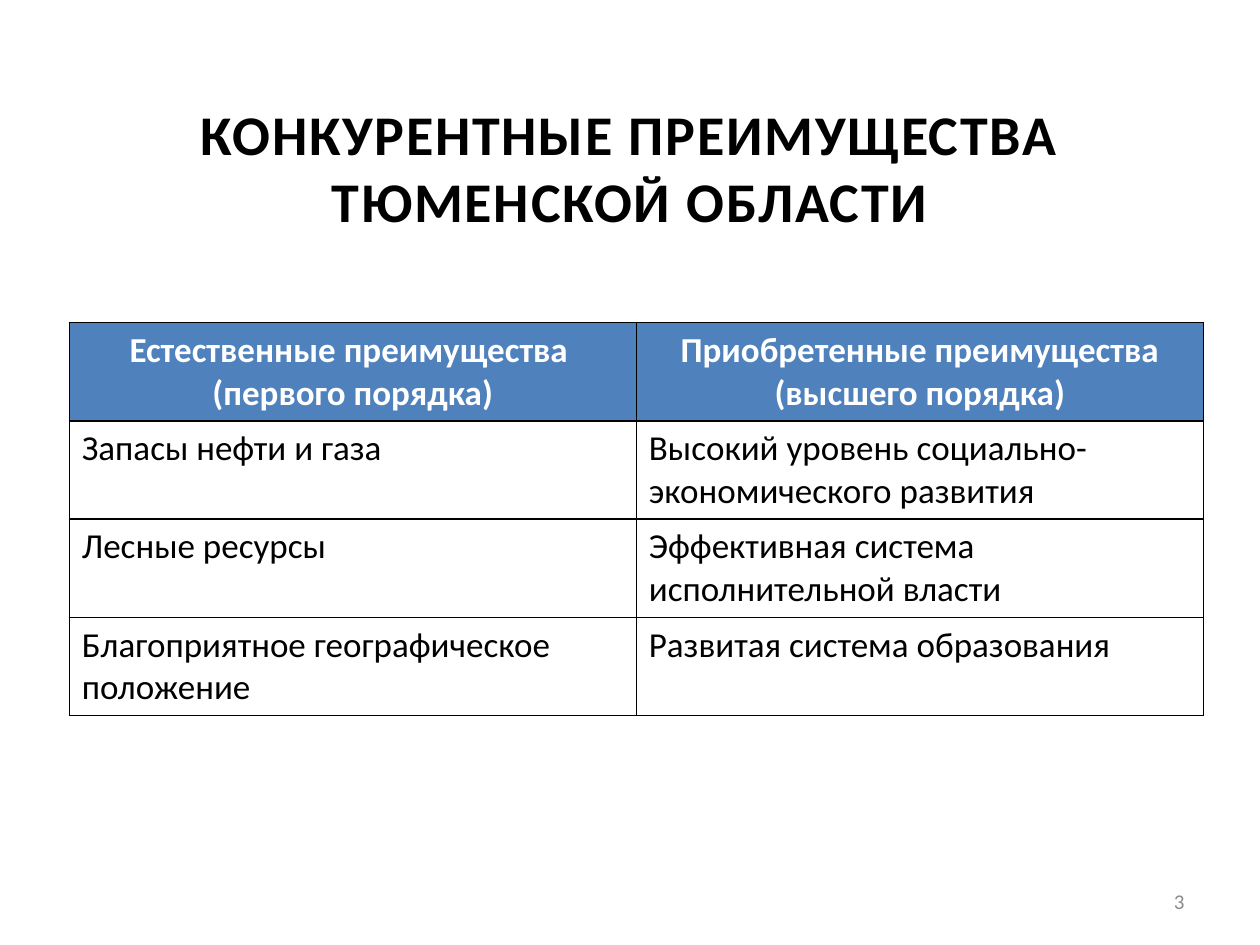
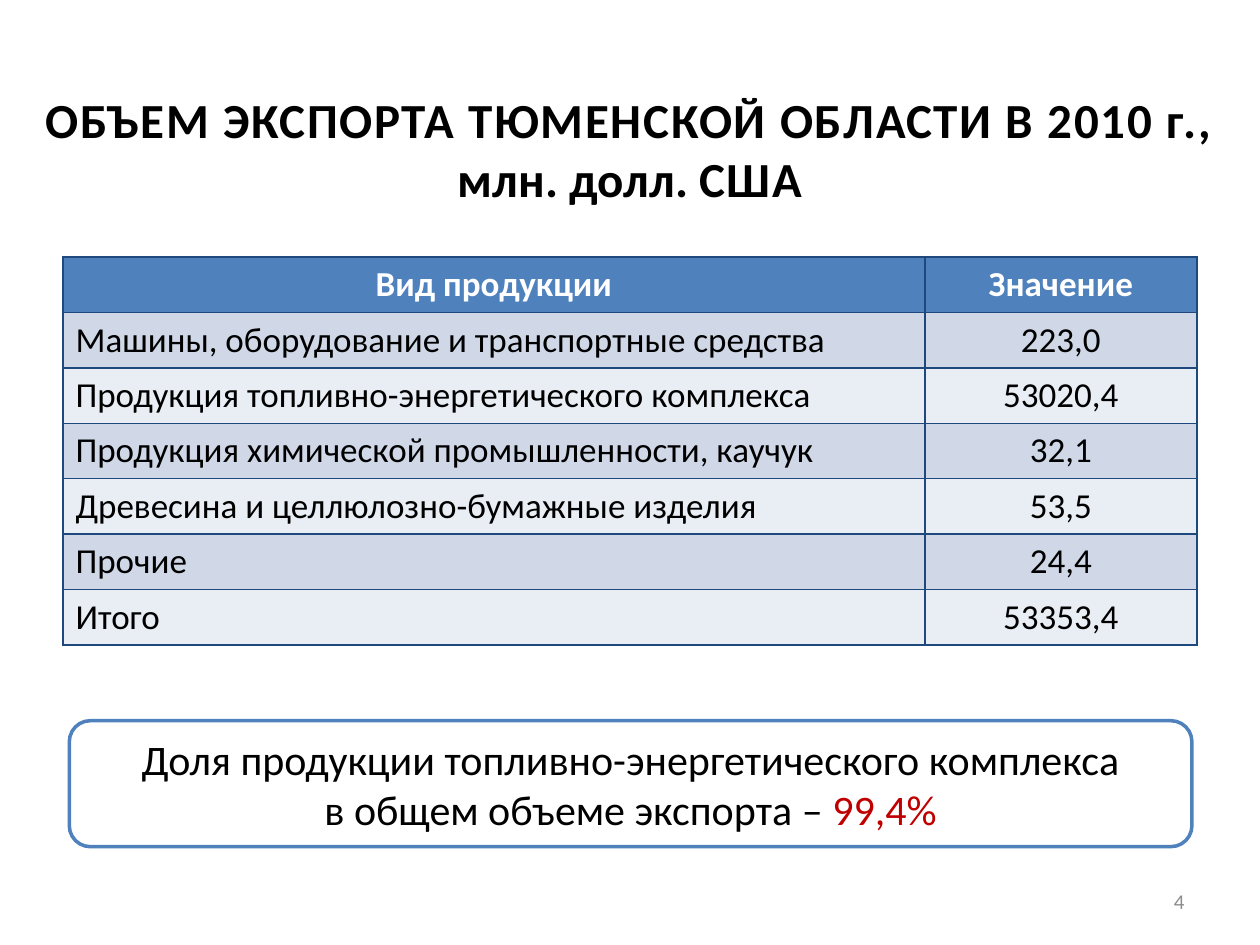
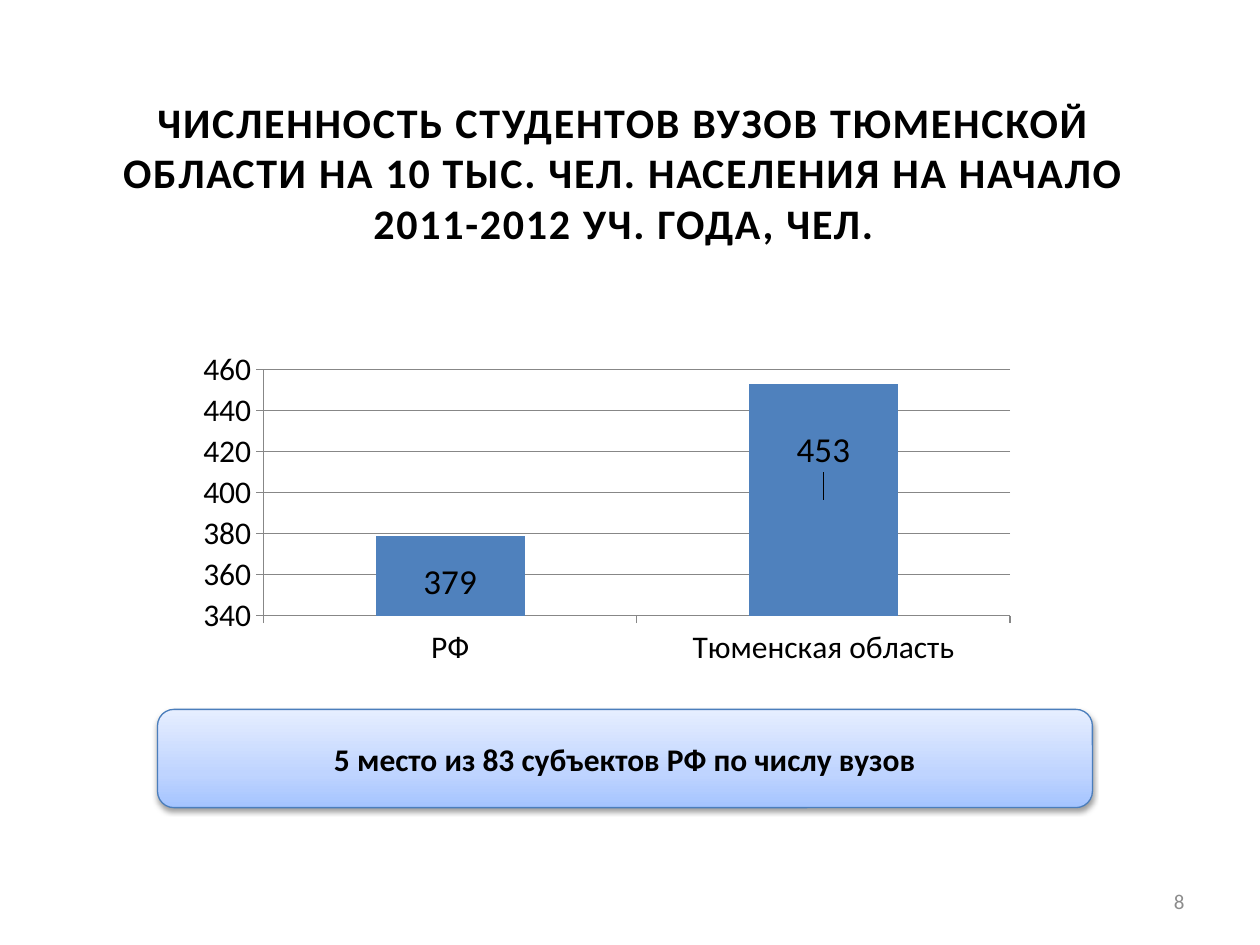
from lxml import etree
from pptx import Presentation
from pptx.chart.data import CategoryChartData
from pptx.dml.color import RGBColor
from pptx.enum.chart import XL_CHART_TYPE as ChartType
from pptx.enum.chart import XL_LABEL_POSITION as LabelPos
from pptx.enum.chart import XL_TICK_MARK as Tick
from pptx.enum.shapes import MSO_SHAPE as Shape
from pptx.enum.text import MSO_ANCHOR as Anchor
from pptx.enum.text import MSO_AUTO_SIZE as AutoSize
from pptx.enum.text import PP_ALIGN as Align
from pptx.oxml import parse_xml
from pptx.oxml.ns import nsdecls, qn
from pptx.util import Inches, Pt

# Shared style
BLACK = RGBColor(0x00, 0x00, 0x00)
WHITE = RGBColor(0xFF, 0xFF, 0xFF)
BLUE = RGBColor(0x4F, 0x81, 0xBD)
NAVY = RGBColor(0x1F, 0x49, 0x7D)
EDGE_BLUE = RGBColor(0x4B, 0x7E, 0xBC)
BAND_DARK = RGBColor(0xD0, 0xD8, 0xE8)
BAND_LIGHT = RGBColor(0xE9, 0xED, 0xF4)
RED = RGBColor(0xC0, 0x00, 0x00)
GREY = RGBColor(0x8C, 0x8C, 0x8C)
AXIS_GREY = RGBColor(0x87, 0x87, 0x87)
BLUE_GLOW = [(0, "A4C4FF"), (35, "BFD4FF"), (100, "E6EEFF")]
FONT = "Calibri"
COLS, ROWS = 100, 75


class Deck:
    """Holds the style and the current slide; boxes are in grid columns and rows."""

    def __init__(self):
        self.prs = Presentation()
        self.prs.slide_width, self.prs.slide_height = Inches(10), Inches(7.5)
        self.s = None

    def x(self, cols):
        return round(self.prs.slide_width * cols / COLS)

    def y(self, rows):
        return round(self.prs.slide_height * rows / ROWS)

    def box(self, left, top, width, height):
        return self.x(left), self.y(top), self.x(width), self.y(height)

    def style(self, font, size, color=BLACK, bold=False):
        font.name, font.size, font.bold = FONT, Pt(size), bold
        font.color.rgb = color

    def run(self, p, text, size, color=BLACK, bold=False, spacing=0):
        r = p.add_run()
        r.text = text
        self.style(r.font, size, color, bold)
        if spacing:
            r._r.get_or_add_rPr().set("spc", str(spacing * 100))

    def paragraphs(self, tf, paragraphs, size, align, color=BLACK, bold=False):
        """Each paragraph is a list of (text, color) runs or a plain string."""
        for i, runs in enumerate(paragraphs):
            p = tf.add_paragraph() if i else tf.paragraphs[0]
            p.alignment = align
            for text, tint in [(runs, color)] if isinstance(runs, str) else runs:
                self.run(p, text, size, tint, bold)

    def slide(self, number, title_box, title_lines, title_size):
        self.s = self.prs.slides.add_slide(self.prs.slide_layouts[5])
        self.title(title_box, title_lines, title_size)
        self.page_number(number)

    def title(self, box, lines, size):
        """Each line is a list of (text, letter spacing) runs."""
        sp = self.s.shapes.title
        sp.left, sp.top, sp.width, sp.height = self.box(*box)
        tf = sp.text_frame
        tf.auto_size, tf.vertical_anchor = AutoSize.NONE, Anchor.MIDDLE
        p = tf.paragraphs[0]
        p.alignment = Align.CENTER
        for i, runs in enumerate(lines):
            if i:
                p.add_line_break()
            for text, spacing in runs:
                self.run(p, text, size, bold=True, spacing=spacing)

    def page_number(self, number):
        tf = self.s.shapes.add_textbox(*self.box(71.7, 69.5, 23.3, 4)).text_frame
        tf.word_wrap, tf.vertical_anchor = True, Anchor.MIDDLE
        self.paragraphs(tf, [str(number)], 12, Align.RIGHT, GREY)

    def table(self, left, top, widths, row_height, rows, aligns, border, bands=()):
        box = self.box(left, top, sum(widths), row_height * len(rows))
        tbl = self.s.shapes.add_table(len(rows), len(widths), *box).table
        for col, width in zip(tbl.columns, widths):
            col.width = self.x(width)
        for i, row in enumerate(rows):
            tbl.rows[i].height = self.y(row_height)
            for j, paragraphs in enumerate(row):
                cell = tbl.cell(i, j)
                head = i == 0
                if head or bands:
                    cell.fill.solid()
                    cell.fill.fore_color.rgb = BLUE if head else bands[(i - 1) % len(bands)]
                else:
                    cell.fill.background()
                self.paragraphs(cell.text_frame, paragraphs, 20,
                                Align.CENTER if head else aligns[j],
                                WHITE if head else BLACK, head)
                self.borders(cell, border)

    def borders(self, cell, color):
        tc_pr = cell._tc.get_or_add_tcPr()
        for i, side in enumerate(("lnL", "lnR", "lnT", "lnB")):
            tc_pr.insert(i, parse_xml(
                f'<a:{side} {nsdecls("a")} w="12700"><a:solidFill>'
                f'<a:srgbClr val="{color}"/></a:solidFill></a:{side}>'))

    def callout(self, box, paragraphs, size, line, line_width, bold=False):
        sp = self.s.shapes.add_shape(Shape.ROUNDED_RECTANGLE, *self.box(*box))
        sp.shadow.inherit = False
        sp.fill.solid()
        sp.fill.fore_color.rgb = WHITE
        sp.line.color.rgb, sp.line.width = line, Pt(line_width)
        tf = sp.text_frame
        tf.word_wrap, tf.vertical_anchor = True, Anchor.MIDDLE
        self.paragraphs(tf, paragraphs, size, Align.CENTER, bold=bold)
        return sp

    def glow(self, sp, stops):
        """Gradient running upwards, with a soft shadow below."""
        sp.fill.gradient()
        grad = sp._element.spPr.find(qn("a:gradFill"))
        gs_list = grad.find(qn("a:gsLst"))
        for gs in list(gs_list):
            gs_list.remove(gs)
        for pos, color in stops:
            gs = etree.SubElement(gs_list, qn("a:gs"), pos=str(pos * 1000))
            etree.SubElement(gs, qn("a:srgbClr"), val=color)
        grad.find(qn("a:lin")).set("ang", "16200000")
        effects = sp._element.spPr.find(qn("a:effectLst"))
        effects.append(parse_xml(
            f'<a:outerShdw {nsdecls("a")} blurRad="{Pt(3.1)}" dist="{Pt(1.6)}" '
            'dir="5400000" rotWithShape="0"><a:srgbClr val="000000">'
            '<a:alpha val="38000"/></a:srgbClr></a:outerShdw>'))

    def column_chart(self, box, cats, vals, axis_range, step, label_shifts):
        data = CategoryChartData()
        data.categories = cats
        data.add_series("Series 1", vals)
        chart = self.s.shapes.add_chart(
            ChartType.COLUMN_CLUSTERED, *self.box(*box), data).chart
        chart.has_legend = chart.has_title = False
        self.style(chart.font, 18)
        plot = chart.plots[0]
        plot.gap_width, plot.vary_by_categories = 150, False
        axis = chart.value_axis
        axis.minimum_scale, axis.maximum_scale = axis_range
        axis.major_unit = step
        axis.has_major_gridlines = True
        lines = [axis.major_gridlines.format.line]
        for ax in (axis, chart.category_axis):
            ax.major_tick_mark = Tick.OUTSIDE
            lines.append(ax.format.line)
        for line in lines:
            line.color.rgb, line.width = AXIS_GREY, Pt(0.75)
        series = plot.series[0]
        series.format.fill.solid()
        series.format.fill.fore_color.rgb = BLUE
        for i, shift in enumerate(label_shifts):
            label = series.points[i].data_label
            self.style(label.font, 20)
            label.position = LabelPos.CENTER
            self.shift_label(series, i, shift)

    def shift_label(self, series, index, shift):
        """Moves a data label down by a share of the chart's height."""
        idx = series._element.findall(".//" + qn("c:dLbl"))[index].find(qn("c:idx"))
        idx.addnext(parse_xml(
            f'<c:layout {nsdecls("c")}><c:manualLayout><c:x val="0"/>'
            f'<c:y val="{shift}"/></c:manualLayout></c:layout>'))


def main():
    deck = Deck()

    # Competitive advantages
    deck.slide(3, (5, 7, 90, 12.5),
               [[("КОНКУРЕНТНЫЕ ПРЕИМУЩЕСТВА ТЮМЕНСКОЙ ОБЛАСТИ", 1)]], 32)
    advantages = [
        (["Естественные преимущества ", "(первого порядка)"],
         ["Приобретенные преимущества (высшего порядка)"]),
        (["Запасы нефти и газа"], ["Высокий уровень социально-экономического развития"]),
        (["Лесные ресурсы"], ["Эффективная система исполнительной власти"]),
        (["Благоприятное географическое положение"], ["Развитая система образования"]),
    ]
    deck.table(5.5, 25.6, (45, 45), 7.8, advantages, (Align.LEFT, Align.LEFT), BLACK)

    # Export volume
    deck.slide(4, (0, 5.5, 100, 12.5),
               [[("ОБЪЕМ ЭКСПОРТА ТЮМЕНСКОЙ ОБЛАСТИ В 2010 г.,", 1)],
                [("млн. долл. ", 0), ("США", 1)]], 28)
    exports = [
        ("Вид продукции", "Значение"),
        ("Машины, оборудование и транспортные средства", "223,0"),
        ("Продукция топливно-энергетического комплекса", "53020,4"),
        ("Продукция химической промышленности, каучук", "32,1"),
        ("Древесина и целлюлозно-бумажные изделия", "53,5"),
        ("Прочие", "24,4"),
        ("Итого", "53353,4"),
    ]
    deck.table(5, 20.4, (68.4, 21.6), 4.4, [([a], [b]) for a, b in exports],
               (Align.LEFT, Align.CENTER), NAVY, (BAND_DARK, BAND_LIGHT))
    deck.callout((5.5, 57.2, 89.1, 10),
                 ["Доля продукции топливно-энергетического комплекса",
                  [("в общем объеме экспорта – ", BLACK), ("99,4%", RED)]],
                 24, BLUE, 2)

    # Student numbers
    deck.slide(8, (4.5, 3.1, 90, 21.1),
               [[("ЧИСЛЕННОСТЬ СТУДЕНТОВ ВУЗОВ ТЮМЕНСКОЙ ОБЛАСТИ НА 10 ТЫС. ЧЕЛ. "
                  "НАСЕЛЕНИЯ НА НАЧАЛО 2011-2012 УЧ. ГОДА, ЧЕЛ.", 1)]], 24)
    deck.column_chart((14.8, 27.3, 66.7, 26.1), ("РФ", "Тюменская область"),
                      (379, 453), (340, 460), 20, (0.02, -0.15))
    rank = deck.callout((12.5, 56.3, 74.2, 7.8),
                        ["5 место из 83 субъектов РФ по числу вузов"],
                        18, EDGE_BLUE, 0.75, bold=True)
    deck.glow(rank, BLUE_GLOW)

    deck.prs.save("out.pptx")


if __name__ == "__main__":
    main()
